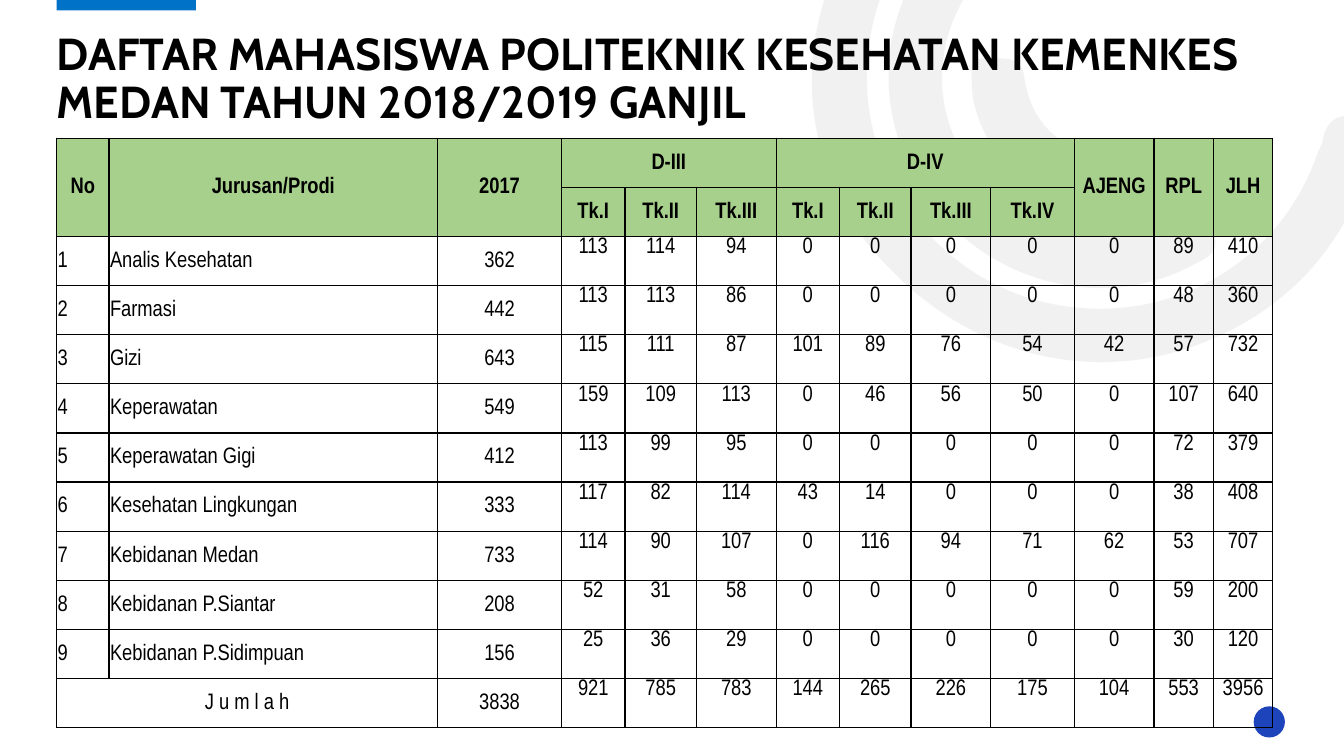
from math import cos, radians, sin

from lxml.etree import SubElement
from pptx import Presentation
from pptx.dml.color import RGBColor
from pptx.enum.shapes import MSO_SHAPE
from pptx.enum.text import MSO_ANCHOR, MSO_AUTO_SIZE, PP_ALIGN
from pptx.oxml.ns import qn
from pptx.util import Pt

TITLE = "DAFTAR MAHASISWA POLITEKNIK KESEHATAN KEMENKES MEDAN TAHUN 2018/2019 GANJIL"

# Each band: start point, then cubic curves as three points, in steps of SWIRL_UNIT points
SWIRL_UNIT = 0.72
SWIRL_ANGLE = 144.2
SWIRL_BANDS = [
    [(71, 439), (19, 359), (7, 260), (58, 160), (110, 58), (196, 7), (310, 3),
     (325, 3), (341, 0), (351, 15), (364, 35), (347, 56), (318, 56),
     (187, 56), (85, 151), (80, 278), (76, 391), (156, 491), (266, 512),
     (380, 534), (490, 471), (527, 362), (529, 358), (531, 354), (532, 350),
     (536, 329), (547, 321), (569, 327), (593, 334), (587, 351), (581, 366),
     (554, 455), (498, 517), (411, 551), (290, 597), (156, 555), (71, 439)],
    [(142, 409), (82, 325), (89, 217), (160, 142), (171, 131), (182, 115), (200, 132),
     (215, 146), (217, 160), (199, 178), (145, 236), (140, 318), (185, 378),
     (228, 439), (308, 459), (381, 425), (402, 415), (413, 422), (423, 439),
     (433, 460), (417, 466), (403, 473), (316, 520), (203, 492), (142, 409)],
    [(207, 361), (195, 340), (184, 317), (184, 292), (184, 283), (181, 267), (196, 268),
     (212, 269), (233, 263), (236, 286), (241, 320), (256, 342), (287, 358),
     (308, 367), (296, 386), (292, 399), (288, 416), (275, 408), (265, 404),
     (241, 397), (223, 380), (207, 361)],
]

COLUMN_SHARES = [52, 326, 123, 63, 71, 79, 63, 71, 79, 83, 79, 59, 59]
HEADER_ROWS = [
    ["No", "Jurusan/Prodi", "2017", "D-III", "", "", "D-IV", "", "", "", "AJENG", "RPL", "JLH"],
    ["", "", "", "Tk.I", "Tk.II", "Tk.III", "Tk.I", "Tk.II", "Tk.III", "Tk.IV", "", "", ""],
]
STUDENT_ROWS = [
    ("Analis Kesehatan", 362, 113, 114, 94, 0, 0, 0, 0, 0, 89, 410),
    ("Farmasi", 442, 113, 113, 86, 0, 0, 0, 0, 0, 48, 360),
    ("Gizi", 643, 115, 111, 87, 101, 89, 76, 54, 42, 57, 732),
    ("Keperawatan", 549, 159, 109, 113, 0, 46, 56, 50, 0, 107, 640),
    ("Keperawatan Gigi", 412, 113, 99, 95, 0, 0, 0, 0, 0, 72, 379),
    ("Kesehatan Lingkungan", 333, 117, 82, 114, 43, 14, 0, 0, 0, 38, 408),
    ("Kebidanan Medan", 733, 114, 90, 107, 0, 116, 94, 71, 62, 53, 707),
    ("Kebidanan P.Siantar", 208, 52, 31, 58, 0, 0, 0, 0, 0, 59, 200),
    ("Kebidanan P.Sidimpuan", 156, 25, 36, 29, 0, 0, 0, 0, 0, 30, 120),
]
TOTAL_ROW = ["J u m l a h", "", 3838, 921, 785, 783, 144, 265, 226, 175, 104, 553, 3956]


def color(hex_string):
    return RGBColor.from_string(hex_string)


def paint(shape, hex_string):
    shape.shadow.inherit = False
    shape.fill.solid()
    shape.fill.fore_color.rgb = color(hex_string)
    shape.line.fill.background()


def add_text(paragraph, text, font_name, size, bold):
    run = paragraph.add_run()
    run.text = text
    run.font.name = font_name
    run.font.size = Pt(size)
    run.font.bold = bold
    run.font.color.rgb = color("000000")


def bend_lines(shape):
    """Turn every three straight segments into one cubic curve."""
    outline = next(shape._element.iter(qn("a:path")))
    lines = outline.findall(qn("a:lnTo"))
    for first in range(0, len(lines), 3):
        curve = outline.makeelement(qn("a:cubicBezTo"))
        lines[first].addprevious(curve)
        for line in lines[first:first + 3]:
            curve.append(line[0])
            outline.remove(line)


def add_swirl(slide, left, top):
    turn = complex(cos(radians(SWIRL_ANGLE)), sin(radians(SWIRL_ANGLE)))
    for nodes in SWIRL_BANDS:
        # Draw the band upright, then turn it into place
        upright = [complex(left + x * SWIRL_UNIT, top + y * SWIRL_UNIT) / turn for x, y in nodes]
        start, *points = [(Pt(node.real), Pt(node.imag)) for node in upright]
        builder = slide.shapes.build_freeform(*start)
        builder.add_line_segments(points, close=True)
        band = builder.convert_to_shape()
        bend_lines(band)
        center = complex(band.left + band.width / 2, band.top + band.height / 2) * turn
        band.left = round(center.real - band.width / 2)
        band.top = round(center.imag - band.height / 2)
        band.rotation = SWIRL_ANGLE
        paint(band, "E7E6E6")
        fill_color = next(band._element.spPr.iter(qn("a:srgbClr")))
        SubElement(fill_color, qn("a:alpha"), val="53000")


def add_accent(slide, kind, box, hex_string):
    paint(slide.shapes.add_shape(kind, *map(Pt, box)), hex_string)


def add_title(slide, box):
    title = slide.shapes.title
    title.left, title.top, title.width, title.height = map(Pt, box)
    frame = title.text_frame
    frame.word_wrap = True
    frame.auto_size = MSO_AUTO_SIZE.NONE
    frame.vertical_anchor = MSO_ANCHOR.BOTTOM
    frame.margin_left = frame.margin_right = frame.margin_top = frame.margin_bottom = 0
    paragraph = frame.paragraphs[0]
    paragraph.alignment = PP_ALIGN.LEFT
    paragraph.line_spacing = 0.9
    add_text(paragraph, TITLE, "Cabin", 32, True)
    # Bring the title in front of the swirl
    slide.shapes._spTree.append(title._element)


def add_borders(cell):
    properties = cell._tc.get_or_add_tcPr()
    for position, side in enumerate(("a:lnL", "a:lnR", "a:lnT", "a:lnB")):
        line = properties.makeelement(qn(side), {"w": str(Pt(1))})
        properties.insert(position, line)
        fill = SubElement(line, qn("a:solidFill"))
        SubElement(fill, qn("a:srgbClr"), val="000000")


def format_cell(cell, value, alignment, anchor, header):
    cell.margin_left = cell.margin_top = cell.margin_right = Pt(0.7)
    cell.margin_bottom = 0
    cell.vertical_anchor = anchor
    if header:
        cell.fill.solid()
        cell.fill.fore_color.rgb = color("A8D08D")
    else:
        cell.fill.background()
    add_borders(cell)
    paragraph = cell.text_frame.paragraphs[0]
    paragraph.alignment = alignment
    if value != "":
        add_text(paragraph, str(value), "Arial Narrow", 16, header)


def add_student_table(slide, left, top, width, height):
    numbered = [[number, *row] for number, row in enumerate(STUDENT_ROWS, 1)]
    rows = HEADER_ROWS + numbered + [TOTAL_ROW]
    frame = slide.shapes.add_table(len(rows), len(COLUMN_SHARES),
                                   Pt(left), Pt(top), Pt(width), Pt(height))
    table = frame.table
    table.first_row = table.horz_banding = False
    for column, share in zip(table.columns, COLUMN_SHARES):
        column.width = Pt(width * share / sum(COLUMN_SHARES))
    for row in table.rows:
        row.height = Pt(height / len(rows))

    for row_index, row in enumerate(rows):
        header = row_index < len(HEADER_ROWS)
        for column_index, value in enumerate(row):
            is_label = row in numbered and column_index < 2
            alignment = PP_ALIGN.JUSTIFY if is_label else PP_ALIGN.CENTER
            anchor = MSO_ANCHOR.MIDDLE if header or column_index < 3 else MSO_ANCHOR.TOP
            format_cell(table.cell(row_index, column_index), value, alignment, anchor, header)

    # Merged headings and the total label
    for column_index in (0, 1, 2, 10, 11, 12):
        table.cell(0, column_index).merge(table.cell(1, column_index))
    table.cell(0, 3).merge(table.cell(0, 5))
    table.cell(0, 6).merge(table.cell(0, 9))
    last = len(rows) - 1
    table.cell(last, 0).merge(table.cell(last, 1))


def main():
    presentation = Presentation()
    presentation.slide_width, presentation.slide_height = Pt(960), Pt(540)
    slide = presentation.slides.add_slide(presentation.slide_layouts[5])
    # Background decoration
    add_swirl(slide, 561.6, -151.2)
    add_accent(slide, MSO_SHAPE.RECTANGLE, (40.5, -1.2, 99.4, 8.6), "0072C7")
    add_accent(slide, MSO_SHAPE.OVAL, (895.5, 504.5, 22.3, 22.3), "1E44BC")
    # Content
    add_title(slide, (40.5, 19.2, 877.7, 72.7))
    add_student_table(slide, 40.5, 98.7, 868.8, 421.2)
    presentation.save("out.pptx")


if __name__ == "__main__":
    main()
